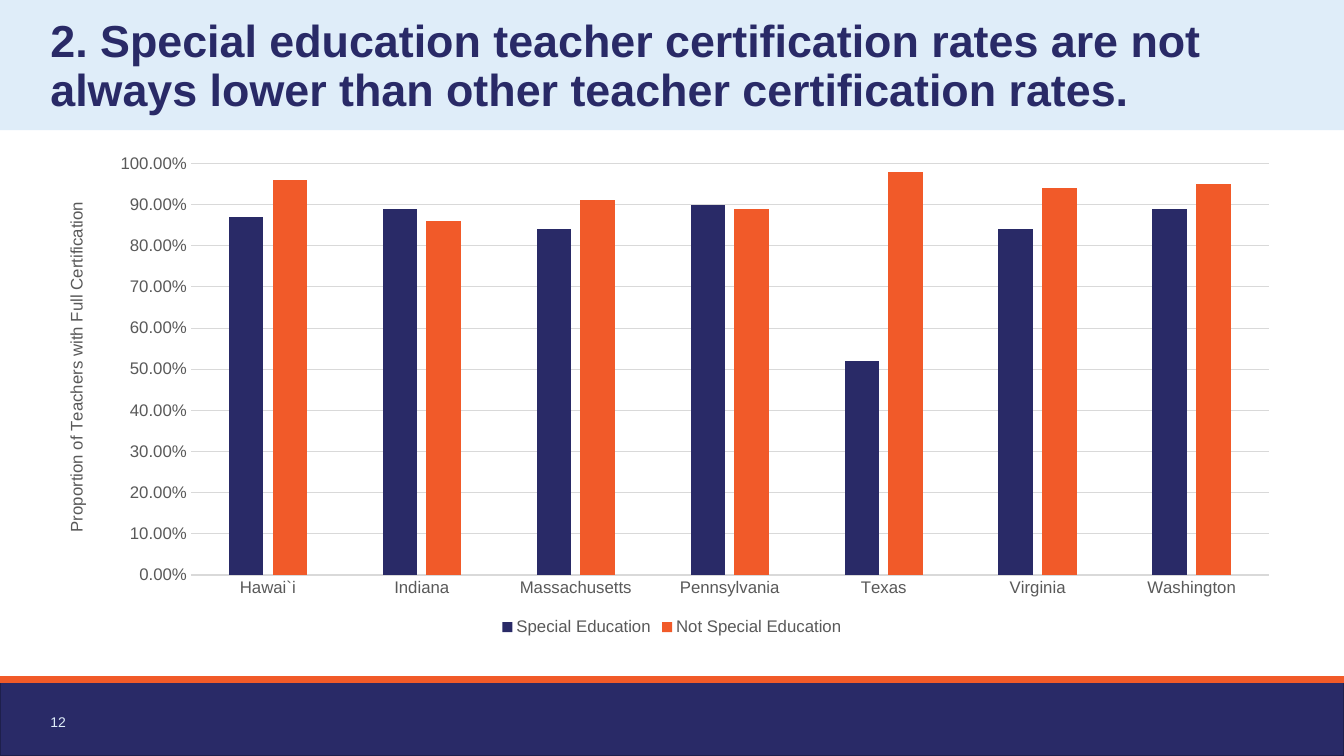
from lxml import etree
from pptx import Presentation
from pptx.chart.data import CategoryChartData
from pptx.dml.color import RGBColor
from pptx.enum.chart import XL_CHART_TYPE, XL_LEGEND_POSITION, XL_TICK_MARK
from pptx.enum.dml import MSO_FILL
from pptx.enum.shapes import MSO_CONNECTOR, MSO_SHAPE
from pptx.enum.text import MSO_ANCHOR
from pptx.oxml.ns import qn
from pptx.util import Inches, Pt

COLUMNS = XL_CHART_TYPE.COLUMN_CLUSTERED
LEGEND_BOTTOM = XL_LEGEND_POSITION.BOTTOM
NO_TICKS = XL_TICK_MARK.NONE
STRAIGHT = MSO_CONNECTOR.STRAIGHT
RECTANGLE = MSO_SHAPE.RECTANGLE
BOTTOM = MSO_ANCHOR.BOTTOM

WIDTH, HEIGHT = 13.33, 7.5
MARGIN = 0.5
CONTENT_WIDTH = WIDTH - 2 * MARGIN
FOOTER_TOP = 6.74
NAVY, ORANGE, PALE_BLUE = "292A67", "F15A29", "DFEDF9"
NAVY_EDGE, GRAY, GRID_GRAY = "1E1F4C", "595959", "D9D9D9"

STATES = ["Hawai`i", "Indiana", "Massachusetts", "Pennsylvania", "Texas", "Virginia", "Washington"]
CERTIFICATION_RATES = [
    ("Special Education", NAVY, [0.87, 0.89, 0.84, 0.9, 0.52, 0.84, 0.89]),
    ("Not Special Education", ORANGE, [0.96, 0.86, 0.91, 0.89, 0.98, 0.94, 0.95]),
]


def color(hex_code):
    return RGBColor.from_string(hex_code)


class ReportSlide:
    font_name = "Arial"

    def __init__(self, presentation):
        self.slide = presentation.slides.add_slide(presentation.slide_layouts[6])
        self.shapes = self.slide.shapes

    def style_font(self, font, size, hex_code, bold=False):
        font.name = self.font_name
        font.size = Pt(size)
        font.bold = bold
        font.color.rgb = color(hex_code)

    def style_line(self, line, hex_code, width):
        line.color.rgb = color(hex_code)
        line.width = Pt(width)

    def band(self, top, height, fill, edge=None):
        band = self.shapes.add_shape(RECTANGLE, 0, Inches(top), Inches(WIDTH), Inches(height))
        band.shadow.inherit = False
        band.fill.solid()
        band.fill.fore_color.rgb = color(fill)
        if edge:
            self.style_line(band.line, edge, 1)
        else:
            band.line.fill.background()

    def rule(self, top, hex_code, width):
        rule = self.shapes.add_connector(STRAIGHT, 0, Inches(top), Inches(WIDTH), Inches(top))
        self.style_line(rule.line, hex_code, width)
        etree.SubElement(rule._element.spPr, qn("a:effectLst"))

    def text(self, words, box, size, hex_code, bold=False, wrap=True, padding=0, spacing=None):
        frame = self.shapes.add_textbox(*map(Inches, box)).text_frame
        frame.word_wrap = wrap
        frame.vertical_anchor = BOTTOM
        frame.margin_left = frame.margin_right = 0
        frame.margin_top = frame.margin_bottom = Inches(padding)
        frame.text = words
        paragraph = frame.paragraphs[0]
        paragraph.line_spacing = spacing
        self.style_font(paragraph.runs[0].font, size, hex_code, bold)

    def layout(self, inner=False, **shares):
        layout = etree.Element(qn("c:layout"))
        manual = etree.SubElement(layout, qn("c:manualLayout"))
        settings = {"layoutTarget": "inner"} if inner else {}
        settings.update(xMode="edge", yMode="edge", **shares)
        for tag, value in settings.items():
            etree.SubElement(manual, qn(f"c:{tag}")).set("val", str(value))
        return layout

    def replace_layout(self, parent, layout, position):
        for previous in parent.findall(qn("c:layout")):
            parent.remove(previous)
        parent.insert(position, layout)

    def column_chart(self, box, categories, series_rows, axis_title):
        data = CategoryChartData(number_format="0.00%")
        data.categories = categories
        for name, _, values in series_rows:
            data.add_series(name, values)
        chart = self.shapes.add_chart(COLUMNS, *map(Inches, box), data).chart
        self.style_font(chart.font, 12, GRAY)
        chart.has_title = False
        chart.has_legend = True
        chart.legend.position = LEGEND_BOTTOM
        chart.legend.include_in_layout = False
        self.style_font(chart.legend.font, 12, GRAY)

        plot = chart.plots[0]
        plot.gap_width = 219
        plot.overlap = -27
        plot.vary_by_categories = False
        for series, (_, fill, _) in zip(plot.series, series_rows):
            series.format.fill.solid()
            series.format.fill.fore_color.rgb = color(fill)

        states, rates = chart.category_axis, chart.value_axis
        for axis in (states, rates):
            axis.major_tick_mark = axis.minor_tick_mark = NO_TICKS
            self.style_font(axis.tick_labels.font, 12, GRAY)
        self.style_line(states.format.line, GRID_GRAY, 0.75)
        rates.format.line.fill.background()
        rates.minimum_scale, rates.maximum_scale, rates.major_unit = 0, 1, 0.1
        rates.tick_labels.number_format = "0.00%"
        rates.tick_labels.number_format_is_linked = False
        self.style_line(rates.major_gridlines.format.line, GRID_GRAY, 0.75)

        title = rates.axis_title
        title.text_frame.text = axis_title
        self.style_font(title.text_frame.paragraphs[0].runs[0].font, 12, GRAY)
        self.replace_layout(title._element, self.layout(x=0.01, y=0.11), 1)
        plot_area = chart._chartSpace.chart.plotArea
        self.replace_layout(plot_area, self.layout(inner=True, x=0.113, y=0.039, w=0.867, h=0.83), 0)


def main():
    presentation = Presentation()
    presentation.slide_width = Inches(WIDTH)
    presentation.slide_height = Inches(HEIGHT)
    report = ReportSlide(presentation)
    report.band(FOOTER_TOP, HEIGHT - FOOTER_TOP, NAVY, NAVY_EDGE)
    report.band(0, 1.29, PALE_BLUE)
    report.rule(FOOTER_TOP, ORANGE, 4.5)
    report.text(
        "2. Special education teacher certification rates are not always lower "
        "than other teacher certification rates.",
        (MARGIN, 0.1, CONTENT_WIDTH, 1.05), 32, NAVY, bold=True, spacing=0.9,
    )
    report.column_chart(
        (MARGIN, 1.43, CONTENT_WIDTH, 4.92), STATES, CERTIFICATION_RATES,
        "Proportion of Teachers with Full Certification",
    )
    report.text("12", (MARGIN, 7.02, 0.27, 0.27), 10, PALE_BLUE, wrap=False, padding=0.05)
    presentation.save("out.pptx")


if __name__ == "__main__":
    main()
